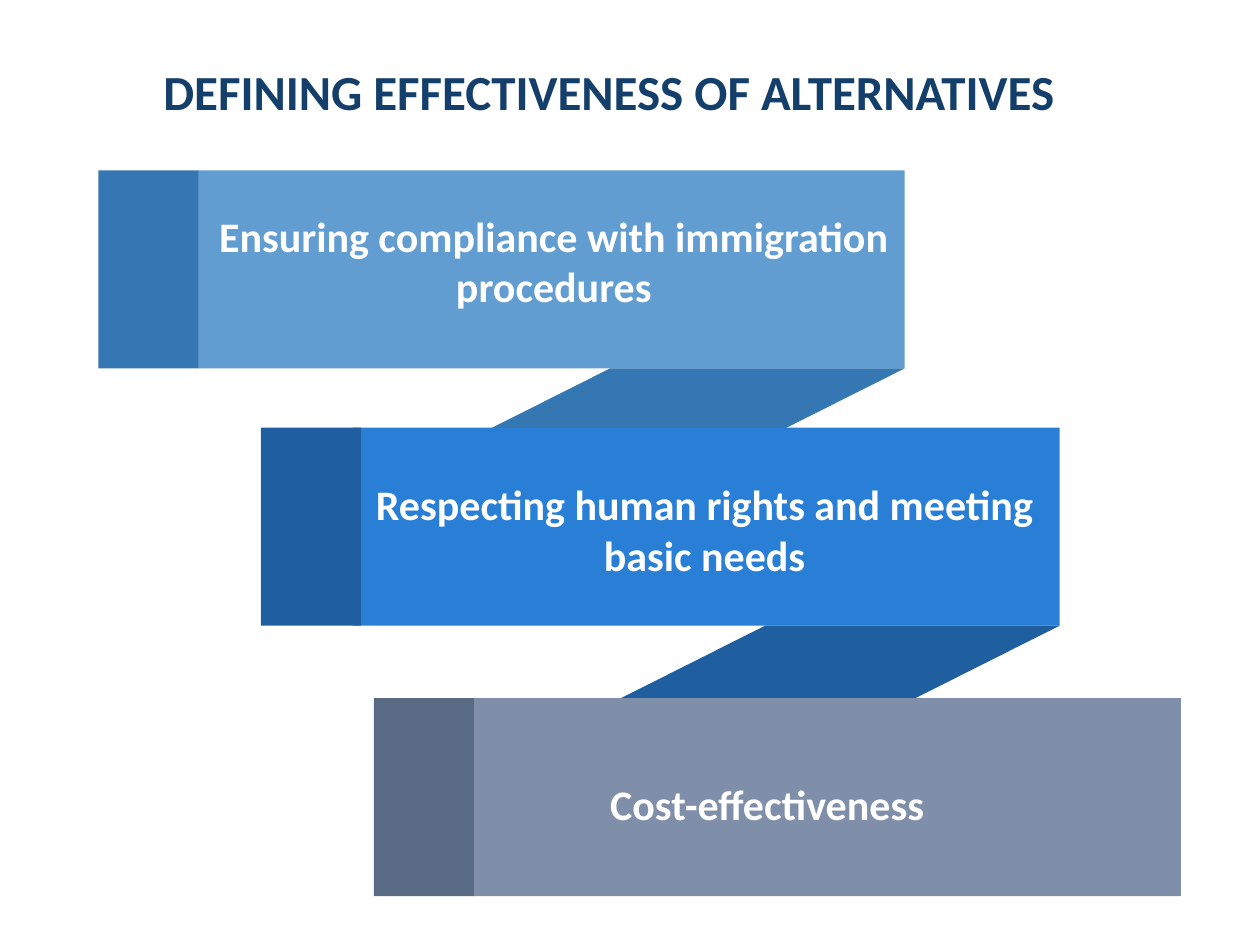
from pptx import Presentation
from pptx import util as u
from pptx.dml.color import RGBColor
from pptx.enum import shapes, text

COLORS = {
    "title": "143F6A",
    "white": "FFFFFF",
    "sky": "629DD1",
    "sky_dark": "3477B2",
    "blue": "297FD5",
    "blue_dark": "1F5FA0",
    "slate": "7F8FA9",
    "slate_dark": "596A85",
}
BAND_WIDTH, BAND_HEIGHT = 404, 113.2
FOLD_WIDTH, FOLD_HEIGHT, FOLD_SLANT = 251.5, 41.8, 1.99


class RibbonSlide:
    font = "Calibri"

    def __init__(self, slide):
        self.slide = slide

    def block(self, kind, left, top, width, height, color):
        shape = self.slide.shapes.add_shape(
            kind, u.Pt(left), u.Pt(top), u.Pt(width), u.Pt(height))
        shape.shadow.inherit = False
        shape.fill.solid()
        shape.fill.fore_color.rgb = RGBColor.from_string(COLORS[color])
        shape.line.fill.background()
        return shape

    def rectangle(self, left, top, width, color):
        self.block(shapes.MSO_SHAPE.RECTANGLE, left, top, width, BAND_HEIGHT, color)

    def fold(self, right, top, color):
        shape = self.block(shapes.MSO_SHAPE.PARALLELOGRAM, right - FOLD_WIDTH, top,
                           FOLD_WIDTH, FOLD_HEIGHT, color)
        shape.adjustments[0] = FOLD_SLANT

    def label(self, content, left, top, width, height, size=24, color="white",
              wrap=True, anchor=text.MSO_ANCHOR.TOP, **paragraph_format):
        box = self.slide.shapes.add_textbox(
            u.Pt(left), u.Pt(top), u.Pt(width), u.Pt(height))
        frame = box.text_frame
        frame.word_wrap = wrap
        frame.vertical_anchor = anchor
        paragraph = frame.paragraphs[0]
        paragraph.alignment = text.PP_ALIGN.CENTER
        for name, value in paragraph_format.items():
            setattr(paragraph, name, value)
        run = paragraph.add_run()
        run.text = content
        for name, value in {"name": self.font, "size": u.Pt(size), "bold": True}.items():
            setattr(run.font, name, value)
        run.font.color.rgb = RGBColor.from_string(COLORS[color])


def main():
    presentation = Presentation()
    presentation.slide_width, presentation.slide_height = u.Pt(720), u.Pt(540)
    ribbon = RibbonSlide(presentation.slides.add_slide(presentation.slide_layouts[6]))

    ribbon.label("DEFINING EFFECTIVENESS OF ALTERNATIVES", 37.6, 17.3, 620.6, 69.8,
                 size=28, color="title", anchor=text.MSO_ANCHOR.MIDDLE,
                 space_before=u.Pt(8), space_after=u.Pt(8))

    bands = [
        (113, 97.3, "sky", 56.2, True),
        (201.6, 244.3, "blue", 149.1, True),
        (270.8, 398.9, "slate", 213.7, False),
    ]
    for left, top, color, tab_left, folds in bands:
        ribbon.rectangle(left, top, BAND_WIDTH, color)
        if folds:
            ribbon.fold(left + BAND_WIDTH, top + BAND_HEIGHT, color + "_dark")
    for left, top, color, tab_left, folds in bands:
        ribbon.rectangle(tab_left, top, 57.2, color + "_dark")

    ribbon.label("Ensuring compliance with immigration procedures", 116, 116.8, 401, 65.4)
    ribbon.label("Respecting human rights and meeting basic needs", 206.9, 270, 391.5, 65.4)
    ribbon.label("Cost-effectiveness", 339.6, 441.4, 197.6, 36.4, wrap=False)

    presentation.save("out.pptx")


if __name__ == "__main__":
    main()
